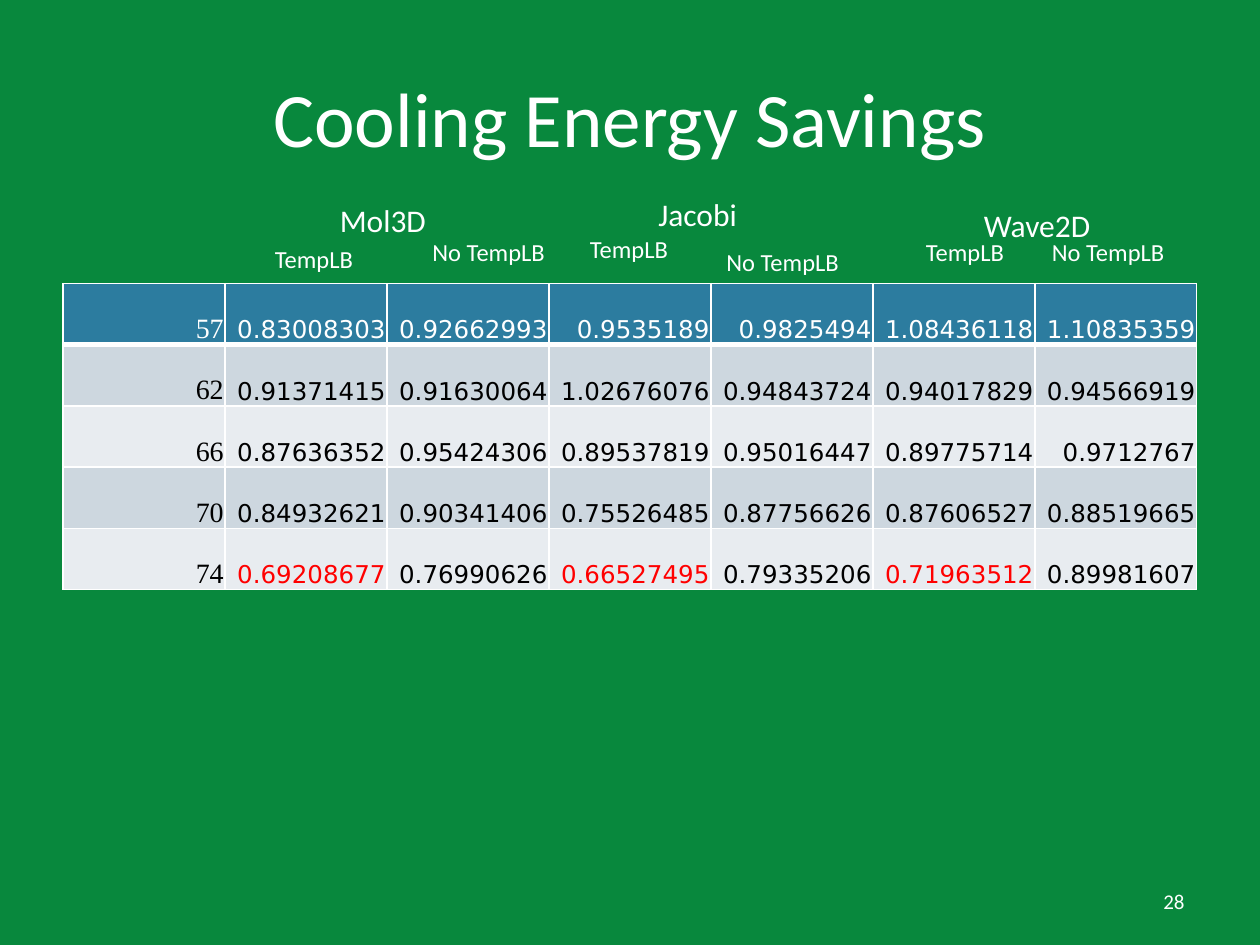
from dataclasses import dataclass

from lxml import etree
from pptx import Presentation
from pptx.dml import color
from pptx.enum import text
from pptx.oxml import ns
from pptx.util import Pt


@dataclass(frozen=True)
class Theme:
    background: str = "08883D"
    light: str = "FFFFFF"
    dark: str = "000000"
    highlight: str = "FF0000"
    header: str = "2C7C9F"
    bands: tuple = ("E8ECF0", "CDD7DF")
    font: str = "Calibri"
    key_font: str = "Times New Roman"
    value_font: str = "DejaVu Sans"
    title_size: int = 44
    group_size: int = 18
    label_size: int = 14
    key_size: int = 16
    value_size: int = 14
    page_size: int = 12


THEME = Theme()

SAVINGS = [
    ("57", "0.83008303", "0.92662993", "0.9535189", "0.9825494", "1.08436118", "1.10835359"),
    ("62", "0.91371415", "0.91630064", "1.02676076", "0.94843724", "0.94017829", "0.94566919"),
    ("66", "0.87636352", "0.95424306", "0.89537819", "0.95016447", "0.89775714", "0.9712767"),
    ("70", "0.84932621", "0.90341406", "0.75526485", "0.87756626", "0.87606527", "0.88519665"),
    ("74", "0.69208677", "0.76990626", "0.66527495", "0.79335206", "0.71963512", "0.89981607"),
]

GROUPS = [
    ("Mol3D", 126, 111.5, 61),
    ("Jacobi", 312, 108, 57),
    ("Wave2D", 498, 114, 57),
]
BALANCED_SPOTS = [(150, 114), (330, 108), (522, 110)]
UNBALANCED_SPOTS = [(240, 132), (408, 137.5), (594, 132)]


def style_text(frame, size, font=THEME.font, ink=THEME.light, align=text.PP_ALIGN.LEFT):
    for para in frame.paragraphs:
        para.alignment = align
        for span in para.runs:
            span.font.size = Pt(size)
            span.font.name = font
            span.font.bold = False
            span.font.color.rgb = color.RGBColor.from_string(ink)


def place(shape, left, top, width, height):
    shape.left, shape.top = Pt(left), Pt(top)
    shape.width, shape.height = Pt(width), Pt(height)


def add_title(page, wording):
    title = page.shapes.title
    place(title, 36, 21.6, 648, 90)
    title.text_frame.text = wording
    title.text_frame.vertical_anchor = text.MSO_ANCHOR.MIDDLE
    style_text(title.text_frame, THEME.title_size, align=text.PP_ALIGN.CENTER)


def add_label(page, wording, area, size, anchor=text.MSO_ANCHOR.TOP,
              align=text.PP_ALIGN.LEFT, indent=0):
    box = page.shapes.add_textbox(*map(Pt, area))
    frame = box.text_frame
    frame.word_wrap = True
    frame.vertical_anchor = anchor
    frame.text = wording
    style_text(frame, size, align=align)
    if indent:
        frame.margin_left += Pt(indent)


def set_borders(cell, widths):
    properties = cell._tc.get_or_add_tcPr()
    for position, (side, width) in enumerate(widths.items()):
        line = etree.Element(ns.qn(f"a:ln{side}"), w=str(Pt(width)))
        fill = etree.SubElement(line, ns.qn("a:solidFill"))
        etree.SubElement(fill, ns.qn("a:srgbClr"), val=THEME.light)
        properties.insert(position, line)


def format_cell(cell, row, column):
    is_header, is_key = row == 0, column == 0
    is_best = row == len(SAVINGS) - 1 and column % 2 == 1
    background = THEME.header if is_header else THEME.bands[row % 2]
    ink = THEME.light if is_header else THEME.highlight if is_best else THEME.dark
    cell.margin_left = cell.margin_right = cell.margin_top = Pt(0.75)
    cell.margin_bottom = Pt(0)
    cell.vertical_anchor = text.MSO_ANCHOR.BOTTOM
    cell.fill.solid()
    cell.fill.fore_color.rgb = color.RGBColor.from_string(background)
    style_text(
        cell.text_frame,
        THEME.key_size if is_key else THEME.value_size,
        THEME.key_font if is_key else THEME.value_font,
        ink,
        text.PP_ALIGN.RIGHT,
    )
    set_borders(cell, {"L": 1, "R": 1, "T": 3 if row == 1 else 1, "B": 3 if is_header else 1})


def add_savings_table(page):
    rows, columns = len(SAVINGS), len(SAVINGS[0])
    area = map(Pt, (36, 162, 648, 175))
    table = page.shapes.add_table(rows, columns, *area).table
    for row, values in enumerate(SAVINGS):
        for column, value in enumerate(values):
            cell = table.cell(row, column)
            cell.text_frame.text = value
            format_cell(cell, row, column)


def add_column_labels(page):
    for name, left, top, indent in GROUPS:
        add_label(page, name, (left, top, 186, 29), THEME.group_size, indent=indent)
    for left, top in BALANCED_SPOTS:
        add_label(page, "TempLB", (left, top, 72, 46), THEME.label_size,
                  anchor=text.MSO_ANCHOR.BOTTOM)
    for left, top in UNBALANCED_SPOTS:
        add_label(page, "No TempLB", (left, top, 90, 24), THEME.label_size)


def main():
    deck = Presentation()
    deck.slide_width, deck.slide_height = Pt(720), Pt(540)
    page = deck.slides.add_slide(deck.slide_layouts[5])
    page.background.fill.solid()
    page.background.fill.fore_color.rgb = color.RGBColor.from_string(THEME.background)
    add_title(page, "Cooling Energy Savings")
    add_savings_table(page)
    add_column_labels(page)
    add_label(page, "28", (516, 500.5, 168, 28.75), THEME.page_size,
              anchor=text.MSO_ANCHOR.MIDDLE, align=text.PP_ALIGN.RIGHT)
    deck.save("out.pptx")


if __name__ == "__main__":
    main()
